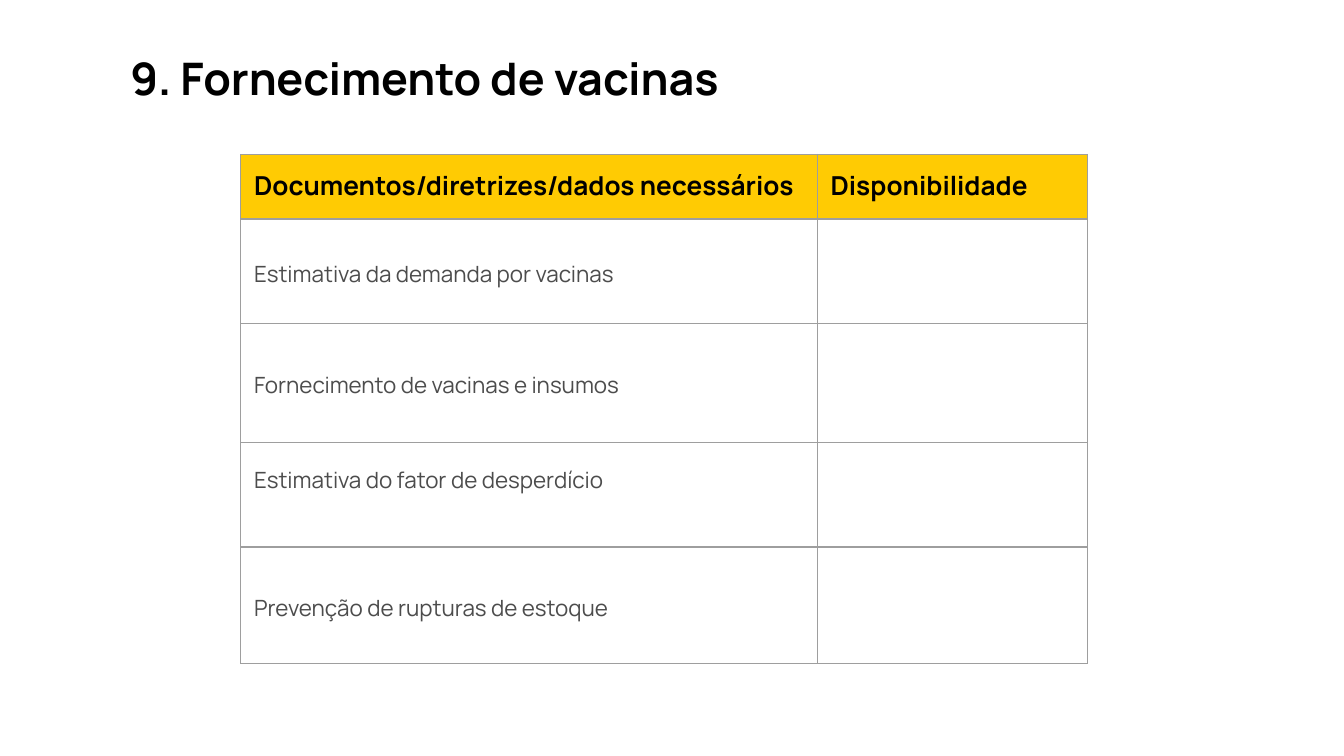
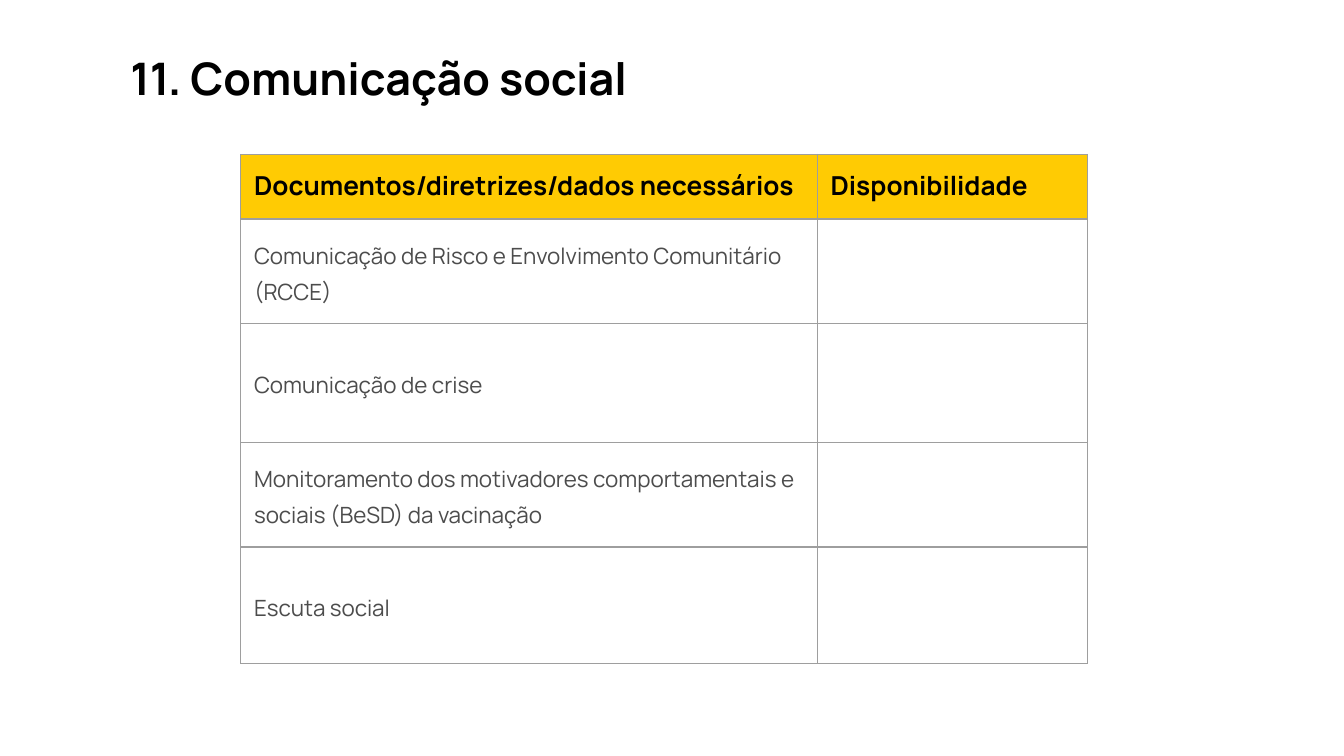
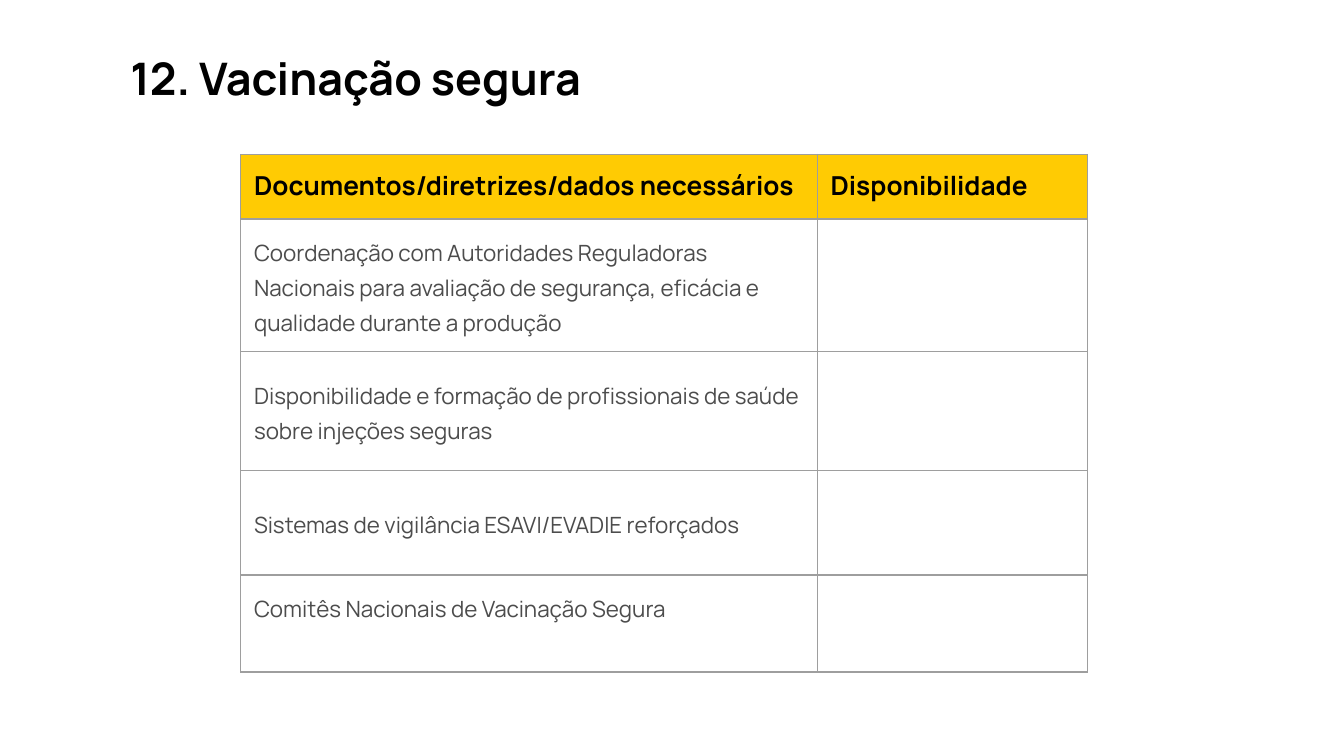
from dataclasses import dataclass

from lxml.etree import SubElement
from pptx import Presentation
from pptx.dml.color import RGBColor
from pptx.enum.text import MSO_ANCHOR as Anchor, MSO_AUTO_SIZE as AutoSize, PP_ALIGN as Align
from pptx.oxml.ns import qn
from pptx.util import Inches, Pt


@dataclass(frozen=True)
class Theme:
    font: str = "Manrope"
    black: str = "000000"
    body_text: str = "4C4C4C"
    header_fill: str = "FFCB03"
    border: str = "9E9E9E"
    border_width: float = 0.75
    title_size: int = 24
    header_size: int = 14
    body_size: int = 12
    body_spacing: float = 1.15
    inset: float = 0.1
    raised_inset: float = 0.36


theme = Theme()

HEADERS = ["Documentos/diretrizes/dados necessários", "Disponibilidade"]
COLUMN_WIDTHS = [4.29, 2.01]
HEADER_HEIGHT = 0.48
ROW_HEIGHTS = [0.78, 0.88, 0.78, 0.87]

# Title, documents, row heights, and the row whose text sits above the middle
TOPICS = [
    ("9. Fornecimento de vacinas", [
        "Estimativa da demanda por vacinas",
        "Fornecimento de vacinas e insumos",
        "Estimativa do fator de desperdício",
        "Prevenção de rupturas de estoque",
    ], ROW_HEIGHTS, 3),
    ("11. Comunicação social", [
        "Comunicação de Risco e Envolvimento Comunitário (RCCE)",
        "Comunicação de crise",
        "Monitoramento dos motivadores comportamentais e sociais (BeSD) da vacinação",
        "Escuta social",
    ], ROW_HEIGHTS, None),
    ("12. Vacinação segura", [
        "Coordenação com Autoridades Reguladoras Nacionais para avaliação de segurança, "
        "eficácia e qualidade durante a produção",
        "Disponibilidade e formação de profissionais de saúde sobre injeções seguras",
        "Sistemas de vigilância ESAVI/EVADIE reforçados",
        "Comitês Nacionais de Vacinação Segura",
    ], [0.98, 0.88, 0.78, 0.72], 4),
]


def add_run(paragraph, text, size, color, bold):
    run = paragraph.add_run()
    run.text = text
    run.font.name = theme.font
    run.font.size = Pt(size)
    run.font.bold = bold
    run.font.color.rgb = RGBColor.from_string(color)


def add_borders(cell):
    """Draw all four sides; call before setting the fill, which must follow them."""
    properties = cell._tc.get_or_add_tcPr()
    for side in ("a:lnL", "a:lnR", "a:lnT", "a:lnB"):
        line = SubElement(properties, qn(side), w=str(Pt(theme.border_width)))
        fill = SubElement(line, qn("a:solidFill"))
        SubElement(fill, qn("a:srgbClr"), val=theme.border)


presentation = Presentation()
presentation.slide_width = Inches(10)
presentation.slide_height = presentation.slide_width * 9 // 16
title_only = presentation.slide_layouts[5]

for heading, documents, row_heights, raised_row in TOPICS:
    slide = presentation.slides.add_slide(title_only)

    title = slide.shapes.title
    title.left, title.top = Inches(0.87), Inches(0.28)
    title.width, title.height = Inches(9.13), Inches(0.59)
    frame = title.text_frame
    frame.auto_size = AutoSize.NONE
    frame.word_wrap = True
    frame.vertical_anchor = Anchor.TOP
    frame.margin_left = frame.margin_right = Inches(theme.inset)
    frame.margin_top = frame.margin_bottom = Inches(theme.inset)
    frame.paragraphs[0].alignment = Align.LEFT
    add_run(frame.paragraphs[0], heading, theme.title_size, theme.black, True)

    heights = [HEADER_HEIGHT, *row_heights]
    table = slide.shapes.add_table(
        len(heights), len(HEADERS), Inches(1.79), Inches(1.15),
        Inches(sum(COLUMN_WIDTHS)), Inches(sum(heights))).table
    table.first_row = table.horz_banding = False
    for column, width in zip(table.columns, COLUMN_WIDTHS):
        column.width = Inches(width)
    for row, height in zip(table.rows, heights):
        row.height = Inches(height)

    for cell in table.iter_cells():
        cell.margin_left = cell.margin_right = Inches(theme.inset)
        cell.margin_top = cell.margin_bottom = Inches(theme.inset)
        add_borders(cell)
        cell.fill.background()

    for column_index, header in enumerate(HEADERS):
        cell = table.cell(0, column_index)
        cell.fill.solid()
        cell.fill.fore_color.rgb = RGBColor.from_string(theme.header_fill)
        add_run(cell.text_frame.paragraphs[0], header, theme.header_size, theme.black, True)

    for row_index, document in enumerate(documents, start=1):
        cell = table.cell(row_index, 0)
        cell.vertical_anchor = Anchor.MIDDLE
        if row_index == raised_row:
            cell.margin_bottom = Inches(theme.raised_inset)
        paragraph = cell.text_frame.paragraphs[0]
        paragraph.line_spacing = theme.body_spacing
        add_run(paragraph, document, theme.body_size, theme.body_text, False)

presentation.save("out.pptx")
